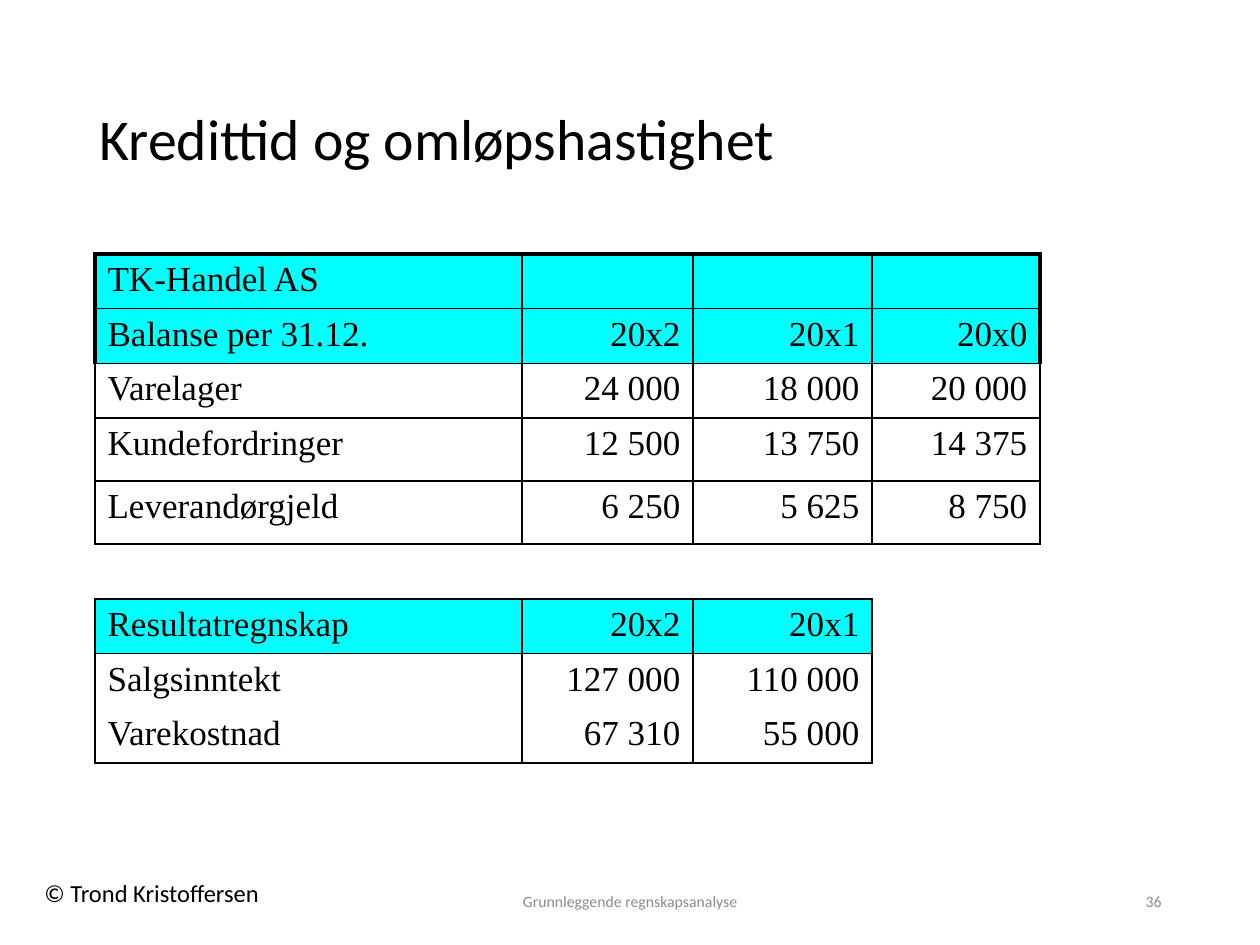
from pptx import Presentation
from pptx.dml.color import RGBColor
from pptx.enum.text import MSO_ANCHOR as VA, PP_ALIGN as AL
from pptx.oxml.ns import qn
from lxml.etree import SubElement

PX = 914400 / 126
BLACK = RGBColor(0, 0, 0)
GREY = RGBColor(0x8C, 0x8C, 0x8C)
CYAN = RGBColor(0, 0xFF, 0xFF)
THIN, THICK = 12700, 28575


def emu(*lengths):
    return [round(n * PX) for n in lengths]


def write(tf, text, size, color, align, name="Calibri", anchor=VA.MIDDLE, wrap=True):
    tf.word_wrap = wrap
    tf.vertical_anchor = anchor
    p = tf.paragraphs[0]
    p.alignment = align
    r = p.add_run()
    r.text = text
    r.font.size = round(size * 12700)
    r.font.name = name
    r.font.color.rgb = color
    return p


prs = Presentation()
prs.slide_width, prs.slide_height = emu(1260, 945)
s = prs.slides.add_slide(prs.slide_layouts[5])

title = s.shapes.title
frame = dict(zip(("left", "top", "width", "height"), emu(87, 50, 1086, 183)))
for key, value in frame.items():
    setattr(title, key, value)
p = write(title.text_frame, "Kredittid og omløpshastighet", 33, BLACK, AL.LEFT)
p.line_spacing = 0.9

footers = [
    ((32, 872, 246, 42), "© Trond Kristoffersen", 14, BLACK, AL.LEFT, VA.TOP, False),
    ((417, 876, 426, 50), "Grunnleggende regnskapsanalyse", 9, GREY, AL.CENTER, VA.MIDDLE, True),
    ((890, 876, 284, 50), "36", 9, GREY, AL.RIGHT, VA.MIDDLE, True),
]
for box, text, size, color, align, anchor, wrap in footers:
    tf = s.shapes.add_textbox(*emu(*box)).text_frame
    write(tf, text, size, color, align, anchor=anchor, wrap=wrap)

rows = [
    ("TK-Handel AS", "", "", ""),
    ("Balanse per 31.12.", "20x2", "20x1", "20x0"),
    ("Varelager", "24 000", "18 000", "20 000"),
    ("Kundefordringer", "12 500", "13 750", "14 375"),
    ("Leverandørgjeld", "6 250", "5 625", "8 750"),
    ("", "", "", ""),
    ("Resultatregnskap", "20x2", "20x1", ""),
    ("Salgsinntekt", "127 000", "110 000", ""),
    ("Varekostnad", "67 310", "55 000", ""),
]
heights = [51, 51, 51, 63, 63, 55, 51, 51, 51]
widths = [427, 171, 179, 168]
GAP, RESULT, LAST = 5, 6, 3

table = s.shapes.add_table(
    len(rows), len(widths), *emu(95, 254, sum(widths), sum(heights))
).table
table.first_row = table.horz_banding = False
for column, width in zip(table.columns, emu(*widths)):
    column.width = width
for row, height in zip(table.rows, emu(*heights)):
    row.height = height

for i, row in enumerate(rows):
    for j, text in enumerate(row):
        cell = table.cell(i, j)
        sides = "LRTB"
        if i == GAP:
            sides = "T" if j == LAST else "TB"
        elif i >= RESULT and j == LAST:
            sides = "L"
        elif i > RESULT:
            sides = "LRT" if i == RESULT + 1 else "LRB"
        thick = {"L": j == 0 and i < 2, "R": j == LAST and i < 2, "T": i == 0, "B": False}
        tcPr = cell._tc.get_or_add_tcPr()
        for side in "LRTB":
            ln = SubElement(tcPr, qn(f"a:ln{side}"), w=str(THICK if thick[side] else THIN))
            if side in sides:
                SubElement(SubElement(ln, qn("a:solidFill")), qn("a:srgbClr"), val=str(BLACK))
            else:
                SubElement(ln, qn("a:noFill"))
        if i < 2 or (i == RESULT and j < LAST):
            cell.fill.solid()
            cell.fill.fore_color.rgb = CYAN
        else:
            cell.fill.background()
        if text:
            write(cell.text_frame, text, 20, BLACK, AL.RIGHT if j else AL.LEFT,
                  "Times New Roman", VA.TOP)

prs.save("out.pptx")
